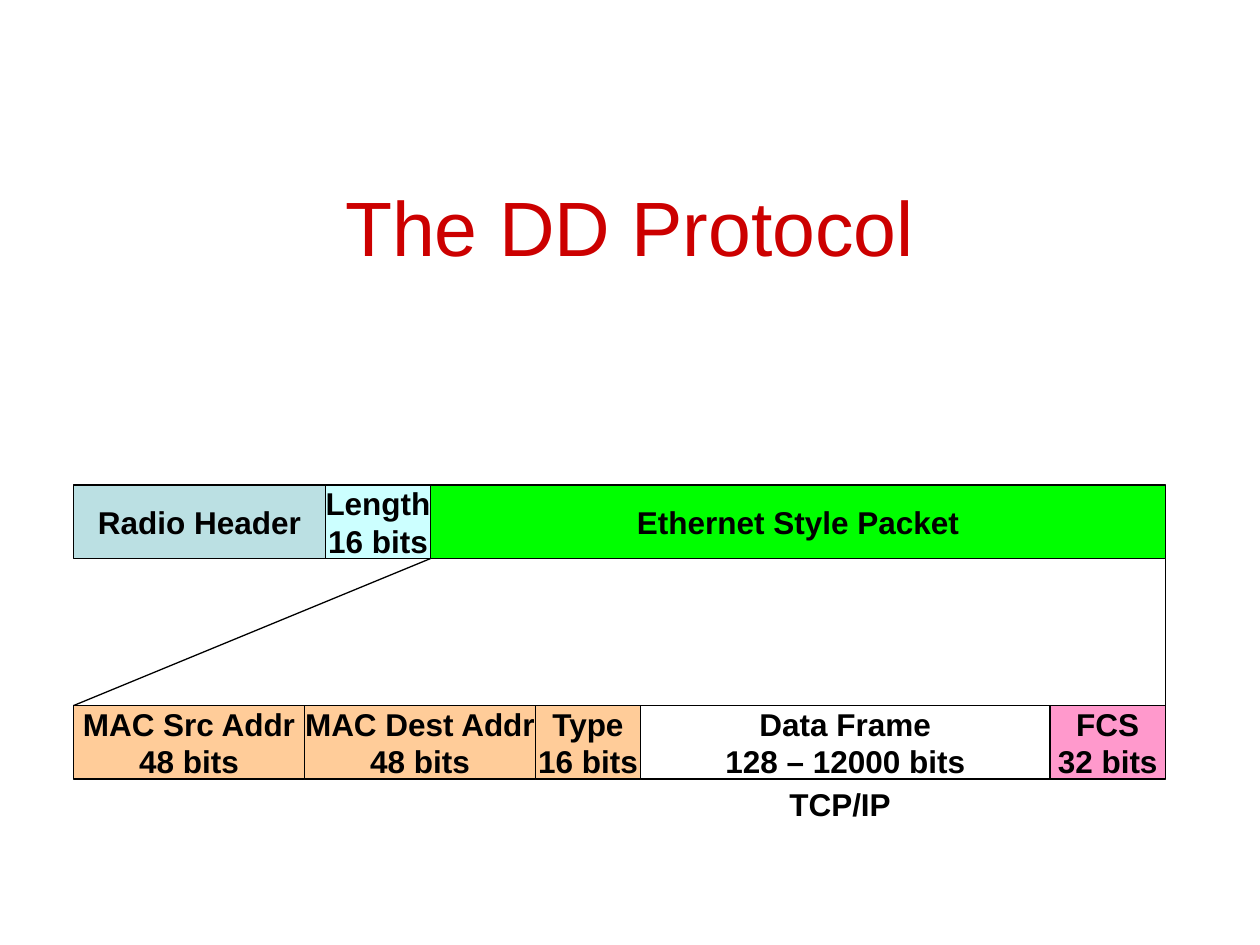
from dataclasses import dataclass

from lxml.etree import SubElement
from pptx import Presentation
from pptx.dml.color import RGBColor
from pptx.enum.shapes import MSO_CONNECTOR, MSO_SHAPE
from pptx.enum.text import MSO_ANCHOR, MSO_AUTO_SIZE, PP_ALIGN
from pptx.oxml.ns import qn
from pptx.slide import Slide
from pptx.text.text import TextFrame
from pptx.util import Inches, Length, Pt

BLACK = RGBColor(0x00, 0x00, 0x00)
WHITE = RGBColor(0xFF, 0xFF, 0xFF)
RED = RGBColor(0xCC, 0x00, 0x00)
GREEN = RGBColor(0x00, 0xFF, 0x00)
TEAL = RGBColor(0xBB, 0xE0, 0xE3)
CYAN = RGBColor(0xCC, 0xFF, 0xFF)
PEACH = RGBColor(0xFF, 0xCC, 0x99)
PINK = RGBColor(0xFF, 0x99, 0xCC)

FONT = "Arial"
LINE = Pt(0.75)

# Grid units are twelfths of an inch.
LEFT, RIGHT = 7, 111
OUTER, INNER = 46.2, 67.2
DEPTH = 7


@dataclass(frozen=True)
class Field:
    lines: tuple[str, ...]
    cols: int
    fill: RGBColor


FRAME = (
    Field(("Radio Header",), 24, TEAL),
    Field(("Length", "16 bits"), 10, CYAN),
    Field(("Ethernet Style Packet",), 70, GREEN),
)
PACKET = (
    Field(("MAC Src Addr", "48 bits"), 22, PEACH),
    Field(("MAC Dest Addr", "48 bits"), 22, PEACH),
    Field(("Type", "16 bits"), 10, PEACH),
    Field(("Data Frame", "128 – 12000 bits"), 39, WHITE),
    Field(("FCS", "32 bits"), 11, PINK),
)


def grid(units: float) -> Length:
    return Inches(units / 12)


def write(frame: TextFrame, lines: tuple[str, ...], size: int = 18,
          color: RGBColor = BLACK, bold: bool = True,
          align: PP_ALIGN = PP_ALIGN.CENTER) -> None:
    for i, line in enumerate(lines):
        para = frame.add_paragraph() if i else frame.paragraphs[0]
        para.alignment = align
        run = para.add_run()
        run.text = line
        run.font.name = FONT
        run.font.size = Pt(size)
        run.font.bold = bold
        run.font.color.rgb = color


def add_row(slide: Slide, fields: tuple[Field, ...], top: float) -> None:
    """Draw the fields side by side, as one group."""
    group = slide.shapes.add_group_shape()
    left = LEFT
    for field in fields:
        box = group.shapes.add_shape(MSO_SHAPE.RECTANGLE, grid(left), grid(top),
                                     grid(field.cols), grid(DEPTH))
        box.shadow.inherit = False
        box.fill.solid()
        box.fill.fore_color.rgb = field.fill
        box.line.color.rgb = BLACK
        box.line.width = LINE
        frame = box.text_frame
        frame.word_wrap = False
        frame.vertical_anchor = MSO_ANCHOR.MIDDLE
        write(frame, field.lines)
        left += field.cols


def add_line(slide: Slide, start: float, end: float) -> None:
    """Join the foot of the outer row to the top of the inner row."""
    line = slide.shapes.add_connector(MSO_CONNECTOR.STRAIGHT,
                                      grid(start), grid(OUTER + DEPTH),
                                      grid(end), grid(INNER))
    line.line.color.rgb = BLACK
    line.line.width = LINE
    SubElement(line._element.spPr, qn("a:effectLst"))


def add_title(slide: Slide) -> None:
    box = slide.shapes.add_textbox(grid(6), grid(14), grid(108), grid(15))
    frame = box.text_frame
    frame.word_wrap = True
    frame.vertical_anchor = MSO_ANCHOR.MIDDLE
    write(frame, ("The DD Protocol",), 44, RED, False)


def add_label(slide: Slide) -> None:
    box = slide.shapes.add_textbox(grid(74), grid(INNER + DEPTH),
                                   grid(13), grid(4.8))
    frame = box.text_frame
    frame.word_wrap = False
    frame.auto_size = MSO_AUTO_SIZE.SHAPE_TO_FIT_TEXT
    write(frame, ("TCP/IP",), align=PP_ALIGN.LEFT)


def main() -> None:
    deck = Presentation()
    deck.slide_width, deck.slide_height = Inches(10), Inches(7.5)
    slide = deck.slides.add_slide(deck.slide_layouts[6])
    add_line(slide, RIGHT - FRAME[-1].cols, LEFT)
    add_line(slide, RIGHT, RIGHT)
    add_row(slide, FRAME, OUTER)
    add_row(slide, PACKET, INNER)
    add_label(slide)
    add_title(slide)
    deck.save("out.pptx")


if __name__ == "__main__":
    main()
